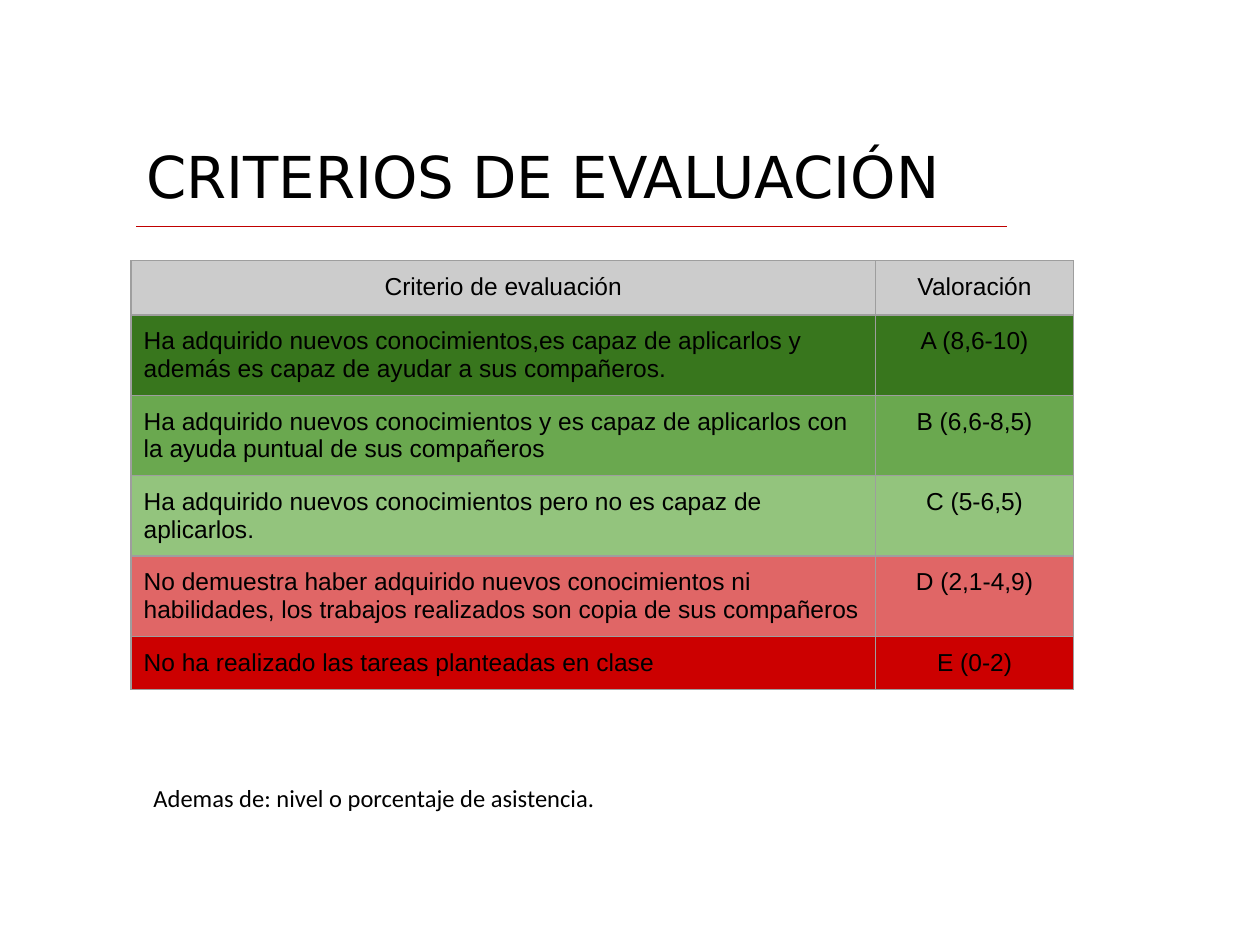
from typing import NamedTuple

from lxml import etree
from pptx import Presentation, util as u
from pptx.dml.color import RGBColor
from pptx.enum import shapes, text
from pptx.oxml import ns

COLORS = {
    "text": "000000", "rule": "C00000", "border": "9E9E9E", "header": "CCCCCC",
    "A": "38761D", "B": "6AA84F", "C": "93C47D", "D": "E06666", "E": "CC0000",
}
WIDTH, HEIGHT = u.Inches(10), u.Inches(7.5)
MARGIN = u.Inches(0.1)
LINE_WIDTH = u.Pt(0.75)
COLUMN_WIDTHS = (5.91, 1.57)
ROW_HEIGHTS = (0.43,) + (0.42,) * 5


class Box(NamedTuple):
    left: float
    top: float
    width: float
    height: float


class Criterion(NamedTuple):
    description: str
    grade: str
    color: str


# Positions as shares of the slide
TITLE = Box(0.106, 0.141, 0.862, 0.09)
RULE = Box(0.108, 0.24, 0.691, 0)
TABLE = Box(0.104, 0.276, 0.748, 0.337)
NOTE = Box(0.112, 0.815, 0.583, 0.059)

CRITERIA = (
    Criterion("Criterio de evaluación", "Valoración", "header"),
    Criterion("Ha adquirido nuevos conocimientos,es capaz de aplicarlos y además "
              "es capaz de ayudar a sus compañeros.", "A (8,6-10)", "A"),
    Criterion("Ha adquirido nuevos conocimientos y es capaz de aplicarlos con la "
              "ayuda puntual de sus compañeros", "B (6,6-8,5)", "B"),
    Criterion("Ha adquirido nuevos conocimientos pero no es capaz de aplicarlos.",
              "C (5-6,5)", "C"),
    Criterion("No demuestra haber adquirido nuevos conocimientos ni habilidades, "
              "los trabajos realizados son copia de sus compañeros", "D (2,1-4,9)", "D"),
    Criterion("No ha realizado las tareas planteadas en clase", "E (0-2)", "E"),
)


def color(name: str) -> RGBColor:
    return RGBColor.from_string(COLORS[name])


def place(box: Box) -> tuple:
    return (round(box.left * WIDTH), round(box.top * HEIGHT),
            round(box.width * WIDTH), round(box.height * HEIGHT))


def write(text_frame, content: str, font: str, size: float, centered: bool = False) -> None:
    text_frame.text = content
    paragraph = text_frame.paragraphs[0]
    paragraph.alignment = text.PP_ALIGN.CENTER if centered else text.PP_ALIGN.LEFT
    for run in paragraph.runs:
        run.font.name = font
        run.font.size = u.Pt(size)
        run.font.bold = False
        run.font.color.rgb = color("text")


def set_margins(target, vertical: int = MARGIN) -> None:
    target.margin_left = target.margin_right = MARGIN
    target.margin_top = target.margin_bottom = vertical


def add_borders(cell) -> None:
    properties = cell._tc.get_or_add_tcPr()
    for index, side in enumerate(("lnL", "lnR", "lnT", "lnB")):
        line = etree.Element(ns.qn(f"a:{side}"), w=str(LINE_WIDTH))
        fill = etree.SubElement(line, ns.qn("a:solidFill"))
        etree.SubElement(fill, ns.qn("a:srgbClr"), val=COLORS["border"])
        properties.insert(index, line)


def add_title(slide) -> None:
    title = slide.shapes.title
    title.left, title.top, title.width, title.height = place(TITLE)
    write(title.text_frame, "CRITERIOS DE EVALUACIÓN", "DejaVu Sans", 33)
    set_margins(title.text_frame, u.Inches(0.05))
    title.text_frame.vertical_anchor = text.MSO_ANCHOR.MIDDLE
    title.text_frame.auto_size = text.MSO_AUTO_SIZE.NONE


def add_rule(slide) -> None:
    left, top, width, height = place(RULE)
    rule = slide.shapes.add_connector(
        shapes.MSO_CONNECTOR.STRAIGHT, left, top, left + width, top + height)
    rule.line.color.rgb = color("rule")
    rule.line.width = LINE_WIDTH
    etree.SubElement(rule._element.spPr, ns.qn("a:effectLst"))


def add_criteria_table(slide) -> None:
    table = slide.shapes.add_table(len(CRITERIA), len(COLUMN_WIDTHS), *place(TABLE)).table
    table.horz_banding = False
    for column, width in zip(table.columns, COLUMN_WIDTHS):
        column.width = u.Inches(width)
    for row, height, criterion in zip(table.rows, ROW_HEIGHTS, CRITERIA):
        row.height = u.Inches(height)
        is_header = criterion.color == "header"
        contents = (criterion.description, criterion.grade)
        for index, (cell, content) in enumerate(zip(row.cells, contents)):
            write(cell.text_frame, content, "Arial", 14, centered=is_header or index == 1)
            set_margins(cell)
            cell.fill.solid()
            cell.fill.fore_color.rgb = color(criterion.color)
            add_borders(cell)


def add_note(slide) -> None:
    text_frame = slide.shapes.add_textbox(*place(NOTE)).text_frame
    text_frame.word_wrap = True
    text_frame.auto_size = text.MSO_AUTO_SIZE.SHAPE_TO_FIT_TEXT
    set_margins(text_frame)
    write(text_frame, "Ademas de: nivel o porcentaje de asistencia.", "Calibri", 14)


def main() -> None:
    presentation = Presentation()
    presentation.slide_width, presentation.slide_height = WIDTH, HEIGHT
    slide = presentation.slides.add_slide(presentation.slide_layouts.get_by_name("Title Only"))

    # Heading
    add_rule(slide)
    add_title(slide)

    # Grades and closing note
    add_criteria_table(slide)
    add_note(slide)
    presentation.save("out.pptx")


if __name__ == "__main__":
    main()
